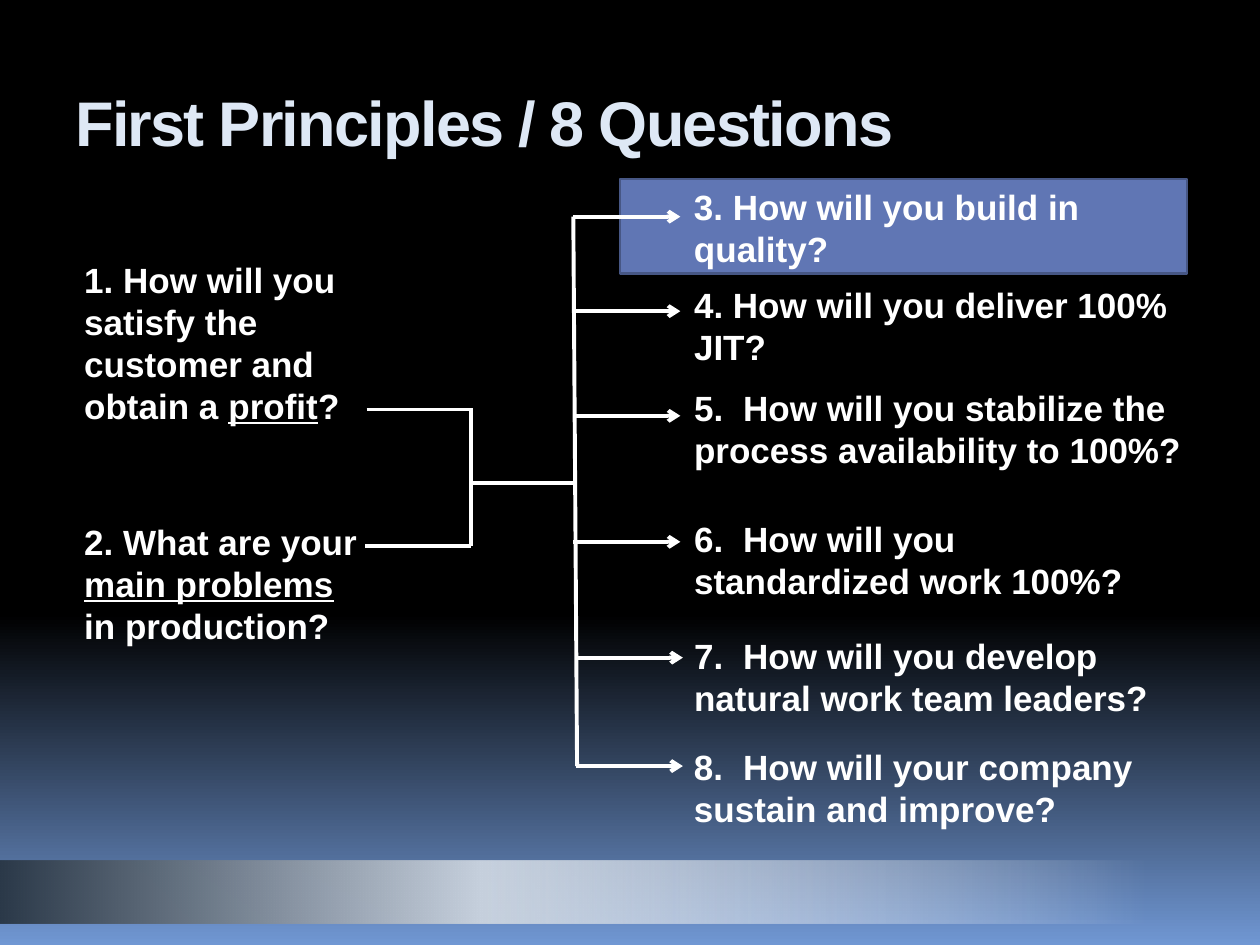
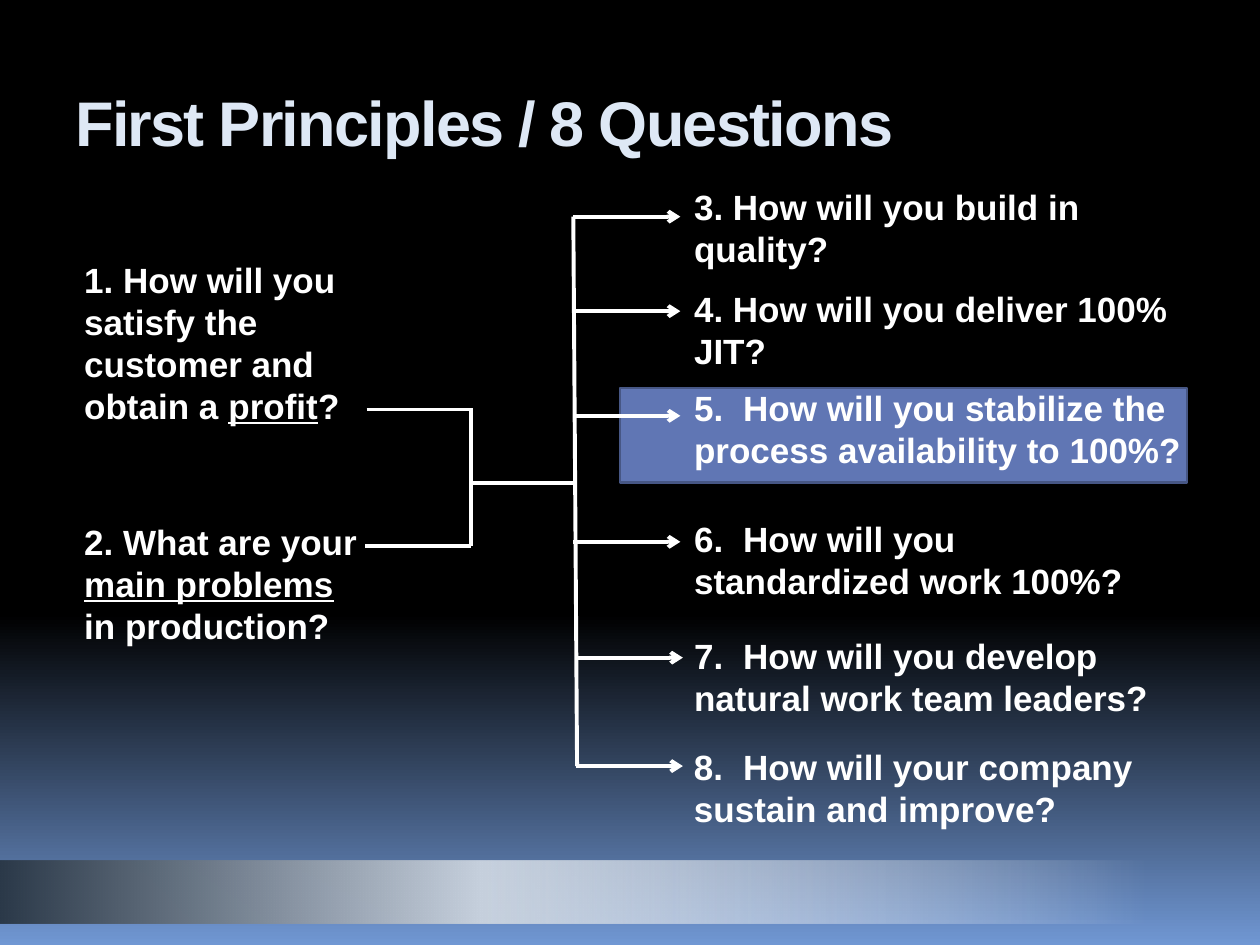
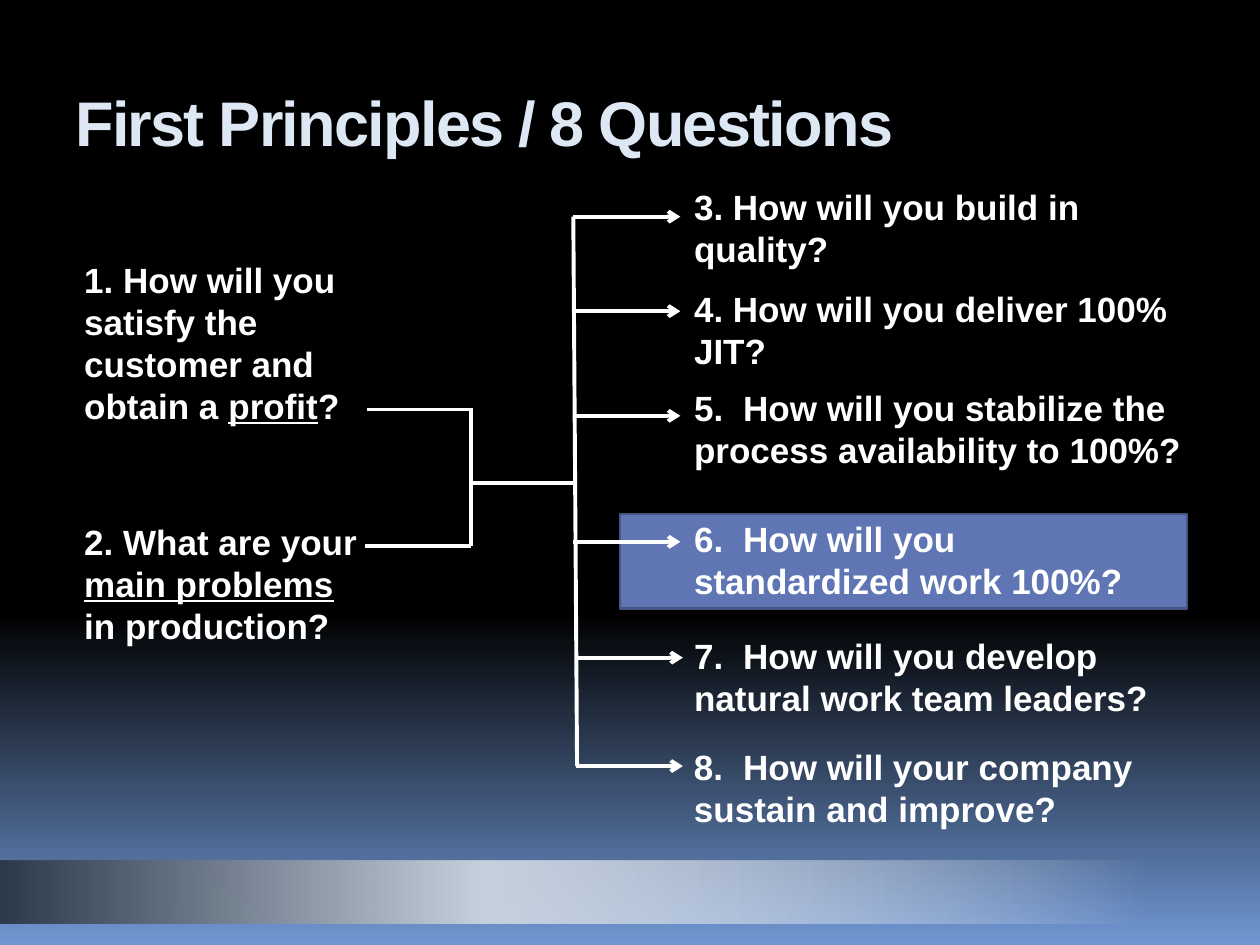
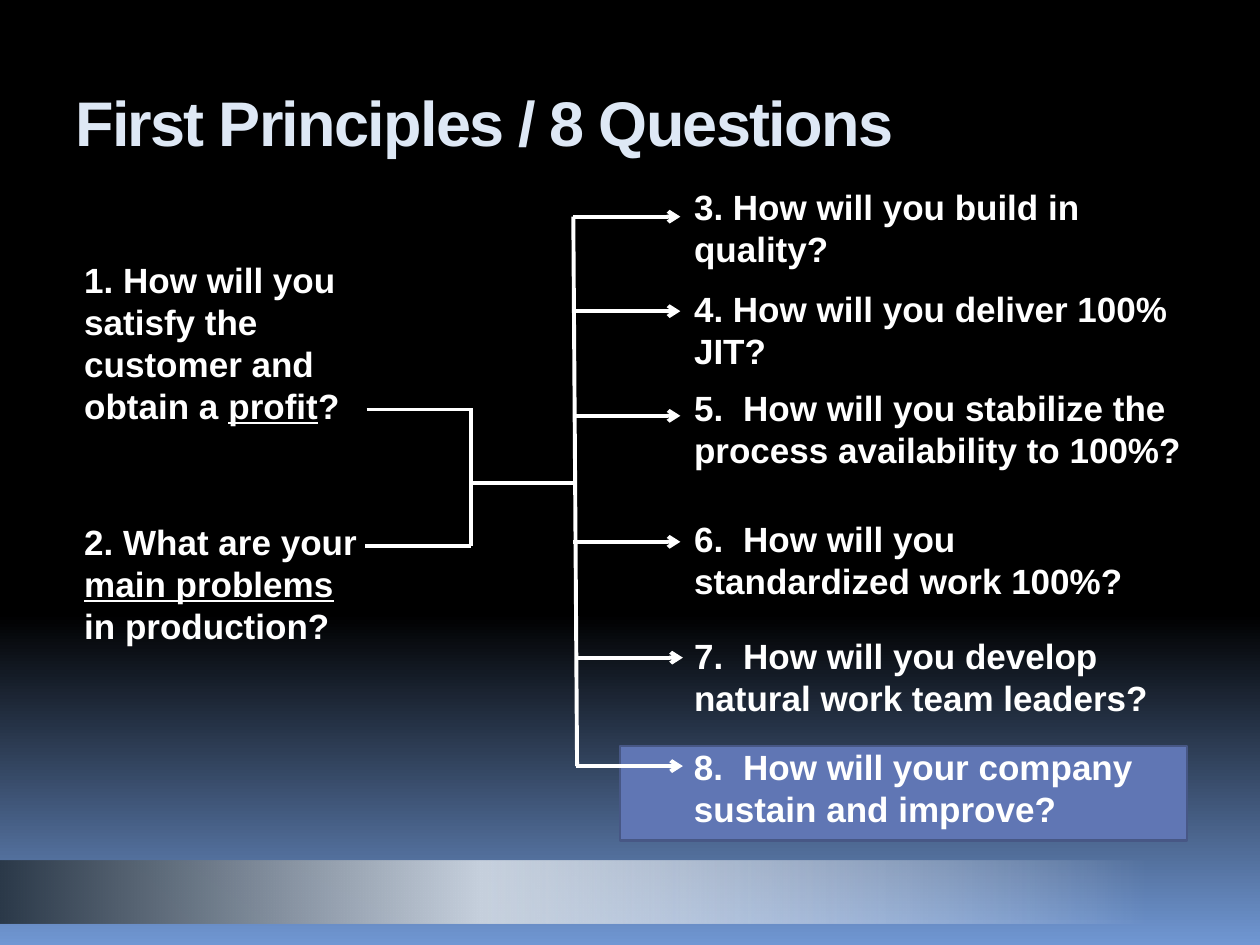
from dataclasses import dataclass, field, replace

from lxml.etree import SubElement
from pptx import Presentation
from pptx.dml.color import RGBColor
from pptx.enum.shapes import MSO_CONNECTOR, MSO_SHAPE
from pptx.enum.text import MSO_ANCHOR, MSO_AUTO_SIZE
from pptx.oxml.ns import qn
from pptx.util import Inches, Pt


@dataclass(frozen=True)
class Theme:
    font: str = "Arial"
    white: str = "FFFFFF"
    title: str = "DEE8F5"
    mark: str = "6076B4"
    edge: str = "475785"
    back: tuple = ((0, "000000"), (65, "000000"), (100, "7097D3"))
    band: tuple = ((0, "FFFFFF", 0), (58, "C7D1DE"), (100, "2B3949"))
    head: float = 36
    body: float = 20
    rule: float = 2.25
    frame: float = 1.5


@dataclass(frozen=True)
class Ask:
    text: str
    left: float
    top: float
    width: float
    height: float = 0.77


@dataclass(frozen=True)
class Line:
    x1: float
    y1: float
    x2: float
    y2: float
    arrow: bool = False


@dataclass(frozen=True)
class Page:
    mark: float
    tweaks: dict = field(default_factory=dict)


THEME = Theme()
RIGHT = 5.41
STEM = 4.55
REACH = 0.85

CAUSES = [
    Ask("1. How will you satisfy the customer and obtain a _profit_?", 0.57, 2, 2.25, 1.45),
    Ask("2. What are your _main problems_ in production?", 0.57, 4.08, 2.42, 1.11),
]
GOALS = {
    3: Ask("3. How will you build in quality?", RIGHT, 1.42, 4.18),
    4: Ask("4. How will you deliver 100% JIT?", RIGHT, 2.23, 3.98),
    5: Ask("5.\tHow will you stabilize the process availability to 100%?", RIGHT, 3.02, 4.18),
    6: Ask("6.\tHow will you standardized work 100%?", RIGHT, 4.06, 3.98),
    7: Ask("7.\tHow will you develop natural work team leaders?", RIGHT, 4.99, 4.18),
    8: Ask("8.\tHow will your company sustain and improve?", RIGHT, 5.87, 3.84),
}
ARROWS = [(STEM, y) for y in (1.72, 2.47, 3.3, 4.3)] + [(STEM + 0.02, y) for y in (5.22, 6.08)]
LINES = [
    Line(STEM, 1.72, 4.58, 6.08),
    *(Line(x, y, x + REACH, y, True) for x, y in ARROWS),
    Line(3.74, 3.83, 4.58, 3.83),
    Line(3.74, 3.25, 3.74, 4.33),
    Line(2.9, 4.33, 3.74, 4.33),
    Line(2.91, 3.25, 3.75, 3.25),
]
PAGES = [
    Page(1.42, {3: {"width": 3.93}, 4: {"top": 2.2}, 5: {"width": 4.09}}),
    Page(3.08),
    Page(4.08),
    Page(5.92, {5: {"width": 4.09}}),
]


def shade(fill, node, stops: tuple, angle: int) -> None:
    fill.gradient()
    grad = node.find(".//" + qn("a:gradFill"))
    for part in list(grad):
        grad.remove(part)
    group = SubElement(grad, qn("a:gsLst"))
    for place, color, *alpha in stops:
        stop = SubElement(group, qn("a:gs"), pos=str(place * 1000))
        tone = SubElement(stop, qn("a:srgbClr"), val=color)
        for value in alpha:
            SubElement(tone, qn("a:alpha"), val=str(value * 1000))
    SubElement(grad, qn("a:lin"), ang=str(angle * 60000), scaled="0")


def add_rect(slide, left: float, top: float, width: float, height: float):
    shape = slide.shapes.add_shape(
        MSO_SHAPE.RECTANGLE, Inches(left), Inches(top), Inches(width), Inches(height))
    shape.shadow.inherit = False
    return shape


def add_band(slide) -> None:
    band = add_rect(slide, 0, 6.83, 9.08, 0.5)
    shade(band.fill, band.element.spPr, THEME.band, 180)
    band.line.fill.background()


def add_mark(slide, top: float) -> None:
    mark = add_rect(slide, 4.92, top, 4.5, 0.75)
    mark.fill.solid()
    mark.fill.fore_color.rgb = RGBColor.from_string(THEME.mark)
    mark.line.color.rgb = RGBColor.from_string(THEME.edge)
    mark.line.width = Pt(THEME.frame)


def add_text(slide, text: str, *, left: float, top: float, width: float, height: float,
             size: float = THEME.body, color: str = THEME.white, inset: float = 0.05,
             grow: bool = True, track: float = 0) -> None:
    box = slide.shapes.add_textbox(Inches(left), Inches(top), Inches(width), Inches(height))
    frame = box.text_frame
    frame.word_wrap = True
    frame.auto_size = MSO_AUTO_SIZE.SHAPE_TO_FIT_TEXT if grow else MSO_AUTO_SIZE.NONE
    frame.vertical_anchor = MSO_ANCHOR.TOP
    frame.margin_top = Inches(inset)
    para = frame.paragraphs[0]
    if "\t" in text:
        tabs = SubElement(para._p.get_or_add_pPr(), qn("a:tabLst"))
        SubElement(tabs, qn("a:tab"), pos=str(Inches(0.39)), algn="l")
    for index, piece in enumerate(text.split("_")):
        run = para.add_run()
        run.text = piece
        font = run.font
        font.name, font.size, font.bold = THEME.font, Pt(size), True
        font.color.rgb = RGBColor.from_string(color)
        if index % 2:
            font.underline = True
        if track:
            run._r.get_or_add_rPr().set("spc", str(int(track * 100)))


def add_ask(slide, ask: Ask) -> None:
    add_text(slide, ask.text, left=ask.left, top=ask.top, width=ask.width, height=ask.height)


def add_line(slide, line: Line) -> None:
    link = slide.shapes.add_connector(
        MSO_CONNECTOR.STRAIGHT, Inches(line.x1), Inches(line.y1), Inches(line.x2), Inches(line.y2))
    link.line.color.rgb = RGBColor.from_string(THEME.white)
    link.line.width = Pt(THEME.rule)
    if line.arrow:
        SubElement(link.line._get_or_add_ln(), qn("a:tailEnd"), type="arrow")
    SubElement(link._element.spPr, qn("a:effectLst"))


def add_page(deck, page: Page) -> None:
    slide = deck.slides.add_slide(deck.slide_layouts[6])
    add_band(slide)
    add_mark(slide, page.mark)
    add_text(slide, "First Principles / 8 Questions", left=0.5, top=0.56, width=9, height=1,
             size=THEME.head, color=THEME.title, inset=0.1, grow=False, track=-1)
    for ask in CAUSES:
        add_ask(slide, ask)
    for number, ask in GOALS.items():
        add_ask(slide, replace(ask, **page.tweaks.get(number, {})))
    for line in LINES:
        add_line(slide, line)


def main() -> None:
    deck = Presentation()
    deck.slide_width, deck.slide_height = Inches(10), Inches(7.5)
    master = deck.slide_master
    shade(master.background.fill, master.element, THEME.back, 90)
    for page in PAGES:
        add_page(deck, page)
    deck.save("out.pptx")


if __name__ == "__main__":
    main()
